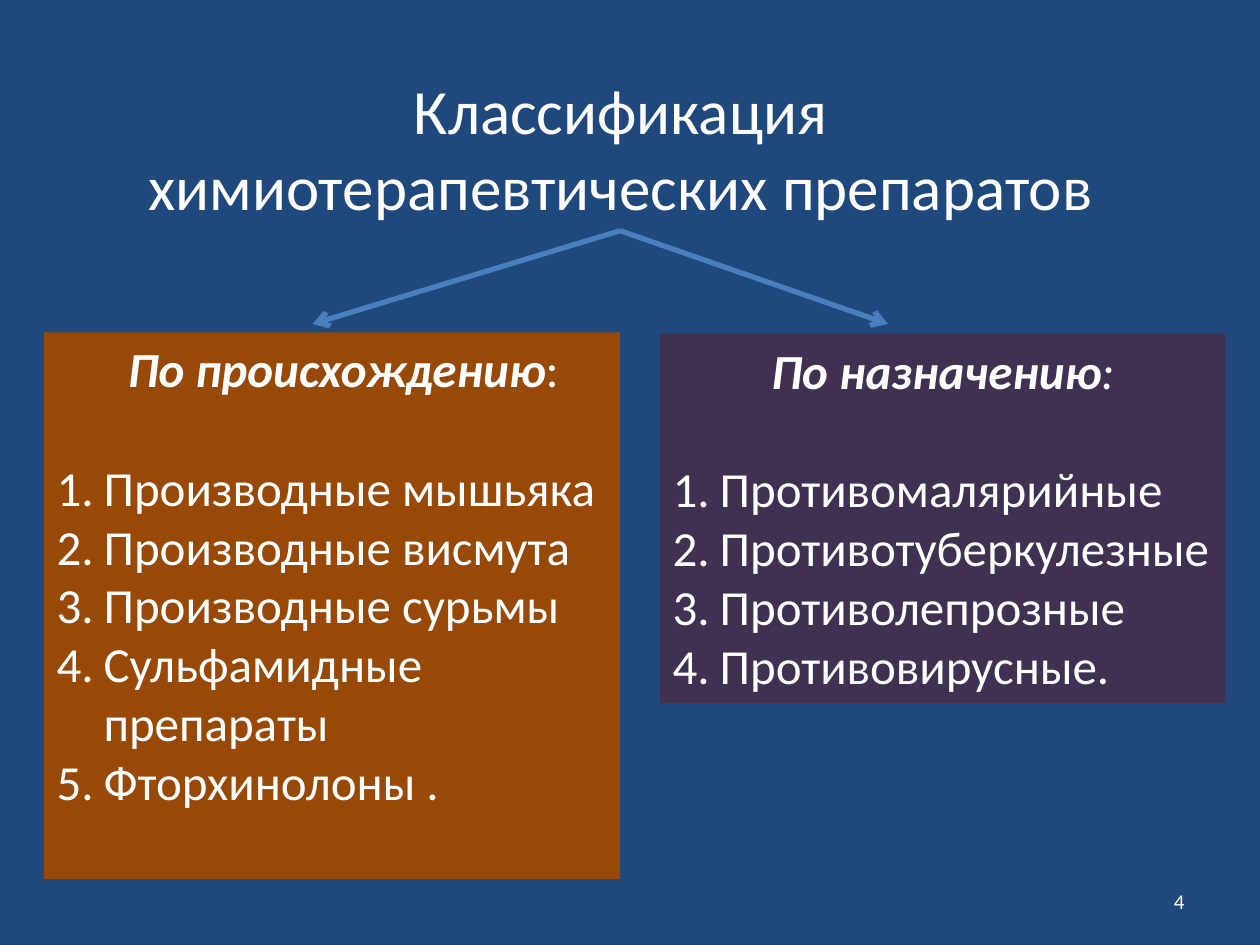
from lxml import etree
from pptx import Presentation
from pptx import util as u
from pptx.dml.color import RGBColor
from pptx.enum import shapes, text
from pptx.oxml.ns import qn

WHITE, ARROW_BLUE = "FFFFFF", "4B7EBC"
LINE_HEIGHT = 34.2  # one 28 pt line of Calibri, in points


def color(hex_string):
    return RGBColor.from_string(hex_string)


def write(paragraph, content, size=28, bold=False, italic=False, align=text.PP_ALIGN.LEFT):
    """Append a formatted run to the paragraph."""
    paragraph.alignment = align
    run = paragraph.add_run()
    run.text = content
    font = run.font
    font.name, font.size = "Calibri", u.Pt(size)
    font.bold, font.italic = bold, italic
    font.color.rgb = color(WHITE)


presentation = Presentation()
presentation.slide_width, presentation.slide_height = u.Cm(25.4), u.Cm(19.05)
slide = presentation.slides.add_slide(presentation.slide_layouts[5])
slide.background.fill.solid()
slide.background.fill.fore_color.rgb = color("1F497D")

# Title
title = slide.shapes.title
title.left, title.top, title.width, title.height = u.Cm(2.11), u.Cm(1.32), u.Cm(20.8), u.Cm(3.33)
title.text_frame.auto_size = text.MSO_AUTO_SIZE.NONE
title.text_frame.vertical_anchor = text.MSO_ANCHOR.TOP
write(title.text_frame.paragraphs[0], "Классификация химиотерапевтических препаратов",
      size=36, align=text.PP_ALIGN.CENTER)

# Two classification panels: left, top, width, height, fill, heading, heading shift, colon italic, items
panels = [
    (0.89, 6.7, 11.61, 11.02, "984807", "По происхождению", 0.45, False,
     ["Производные мышьяка", "Производные висмута", "Производные сурьмы",
      "Сульфамидные препараты", "Фторхинолоны ."]),
    (13.31, 6.73, 11.4, 7.44, "403152", "По назначению", 0, True,
     ["Противомалярийные", "Противотуберкулезные", "Противолепрозные", "Противовирусные."]),
]
for left, top, width, height, fill, heading, shift, colon_italic, items in panels:
    panel = slide.shapes.add_shape(shapes.MSO_SHAPE.RECTANGLE,
                                   u.Cm(left), u.Cm(top), u.Cm(width), u.Cm(height))
    panel.shadow.inherit = False
    panel.fill.solid()
    panel.fill.fore_color.rgb = color(fill)
    panel.line.fill.background()
    frame = panel.text_frame
    frame.word_wrap = True
    frame.vertical_anchor = text.MSO_ANCHOR.TOP

    paragraph = frame.paragraphs[0]
    write(paragraph, heading, bold=True, italic=True, align=text.PP_ALIGN.CENTER)
    write(paragraph, ":", italic=colon_italic, align=text.PP_ALIGN.CENTER)
    paragraph.space_after = u.Pt(LINE_HEIGHT)
    paragraph._p.get_or_add_pPr().set("marL", str(u.Cm(shift)))

    for item in items:
        paragraph = frame.add_paragraph()
        write(paragraph, item)
        properties = paragraph._p.get_or_add_pPr()
        properties.set("marL", str(u.Cm(0.95)))
        properties.set("indent", str(-u.Cm(0.95)))
        etree.SubElement(properties, qn("a:buAutoNum"), type="arabicPeriod")

# Arrows from the title to the panels
for end_x in (6.3, 17.9):
    arrow = slide.shapes.add_connector(shapes.MSO_CONNECTOR.STRAIGHT,
                                       u.Cm(12.5), u.Cm(4.65), u.Cm(end_x), u.Cm(6.53))
    arrow.line.color.rgb = color(ARROW_BLUE)
    arrow.line.width = u.Pt(3)
    etree.SubElement(arrow.line._get_or_add_ln(), qn("a:tailEnd"), type="arrow")
    etree.SubElement(arrow._element.spPr, qn("a:effectLst"))

# Slide number
number = slide.shapes.add_textbox(u.Cm(18.2), u.Cm(17.66), u.Cm(5.93), u.Cm(1.01))
number.text_frame.word_wrap = True
number.text_frame.vertical_anchor = text.MSO_ANCHOR.MIDDLE
write(number.text_frame.paragraphs[0], "4", size=12, align=text.PP_ALIGN.RIGHT)

presentation.save("out.pptx")
